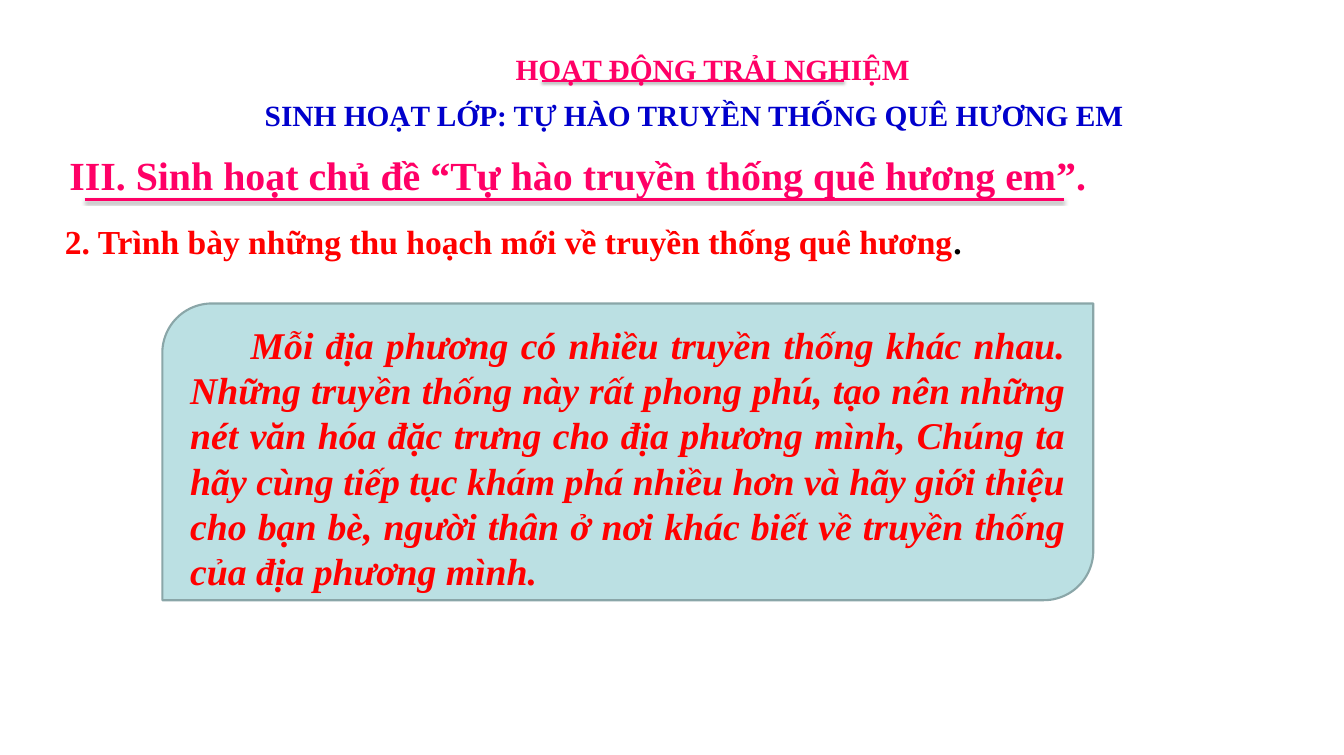
from lxml import etree
from pptx import Presentation
from pptx import util as u
from pptx.dml.color import RGBColor
from pptx.enum import shapes, text
from pptx.oxml.ns import qn

PINK = RGBColor(0xFF, 0x00, 0x66)
BLUE = RGBColor(0x00, 0x00, 0xCC)
RED = RGBColor(0xFF, 0x00, 0x00)
BLACK = RGBColor(0x00, 0x00, 0x00)
PANEL_FILL = RGBColor(0xBB, 0xE0, 0xE3)
PANEL_LINE = RGBColor(0x8A, 0xA6, 0xA8)
LEFT, CENTER, JUSTIFY = text.PP_ALIGN.LEFT, text.PP_ALIGN.CENTER, text.PP_ALIGN.JUSTIFY


def write(sp, runs, size, frame=None, para=None, italic=False):
    tf = sp.text_frame
    base = {"word_wrap": True, "auto_size": text.MSO_AUTO_SIZE.NONE,
            "vertical_anchor": text.MSO_ANCHOR.TOP}
    for name, value in {**base, **(frame or {})}.items():
        setattr(tf, name, value)
    p = tf.paragraphs[0]
    for name, value in {"alignment": LEFT, **(para or {})}.items():
        setattr(p, name, value)
    for words, color in runs:
        r = p.add_run()
        r.text = words
        r.font.color.rgb = color
        for name, value in {"name": "Times New Roman", "size": u.Pt(size),
                            "bold": True, "italic": italic}.items():
            setattr(r.font, name, value)
    return p


def underline(x1, x2, y, width, alpha, dist):
    sp = s.shapes.add_connector(shapes.MSO_CONNECTOR.STRAIGHT,
                                u.Inches(x1), u.Inches(y), u.Inches(x2), u.Inches(y))
    sp.line.color.rgb = PINK
    sp.line.width = u.Pt(width)
    effects = etree.SubElement(sp._element.spPr, qn("a:effectLst"))
    shadow = etree.SubElement(effects, qn("a:outerShdw"), blurRad=str(u.Pt(3.1)),
                              dist=str(u.Pt(dist)), dir="5400000", rotWithShape="0")
    color = etree.SubElement(shadow, qn("a:srgbClr"), val="000000")
    etree.SubElement(color, qn("a:alpha"), val=str(alpha * 1000))


prs = Presentation()
prs.slide_width, prs.slide_height = u.Inches(17.8), u.Inches(10)
s = prs.slides.add_slide(prs.slide_layouts[5])

underline(7.18, 11.18, 1.07, 2, 38, 1.6)

sp = s.shapes.add_textbox(u.Inches(6.73), u.Inches(0.63), u.Inches(5.48), u.Inches(0.57))
write(sp, [("HOẠT ĐỘNG TRẢI NGHIỆM", PINK)], 28, {"word_wrap": False})

sp = s.shapes.title
for name, value in {"left": 3.15, "top": 1.2, "width": 12.08, "height": 0.63}.items():
    setattr(sp, name, u.Inches(value))
write(sp, [("SINH HOẠT LỚP: TỰ HÀO TRUYỀN THỐNG QUÊ HƯƠNG EM", BLUE)], 28,
      {"margin_left": u.Inches(0.16), "margin_right": u.Inches(0.16),
       "margin_top": u.Inches(0.08), "margin_bottom": u.Inches(0.08)},
      {"alignment": CENTER})

sp = s.shapes.add_textbox(u.Inches(0.82), u.Inches(1.95), u.Inches(14.67), u.Inches(1.38))
write(sp, [("III. Sinh hoạt chủ đề “Tự hào truyền thống quê hương em”.", PINK)], 38)
underline(1.12, 14.09, 2.64, 3, 35, 1.8)

sp = s.shapes.add_textbox(u.Inches(0.76), u.Inches(2.77), u.Inches(13.08), u.Inches(0.75))
write(sp, [("2. Trình bày những thu hoạch mới về truyền thống quê hương", RED), (".", BLACK)],
      32, para={"alignment": JUSTIFY, "line_spacing": 1.2})

panel = s.shapes.add_shape(shapes.MSO_SHAPE.ROUND_2_DIAG_RECTANGLE,
                           u.Inches(2.15), u.Inches(4.02), u.Inches(12.33), u.Inches(3.93))
panel.shadow.inherit = False
panel.fill.solid()
panel.fill.fore_color.rgb = PANEL_FILL
panel.line.color.rgb = PANEL_LINE
panel.line.width = u.Pt(2)

sp = s.shapes.add_textbox(u.Inches(2.42), u.Inches(4.21), u.Inches(11.79), u.Inches(3.74))
p = write(sp, [("Mỗi địa phương có nhiều truyền thống khác nhau. Những truyền thống này rất "
                "phong phú, tạo nên những nét văn hóa đặc trưng cho địa phương mình, Chúng ta "
                "hãy cùng tiếp tục khám phá nhiều hơn và hãy giới thiệu cho bạn bè, người thân "
                "ở nơi khác biết về truyền thống của địa phương mình.", RED)],
          36, para={"alignment": JUSTIFY}, italic=True)
p._p.get_or_add_pPr().set("indent", str(u.Inches(0.8)))

prs.save("out.pptx")
